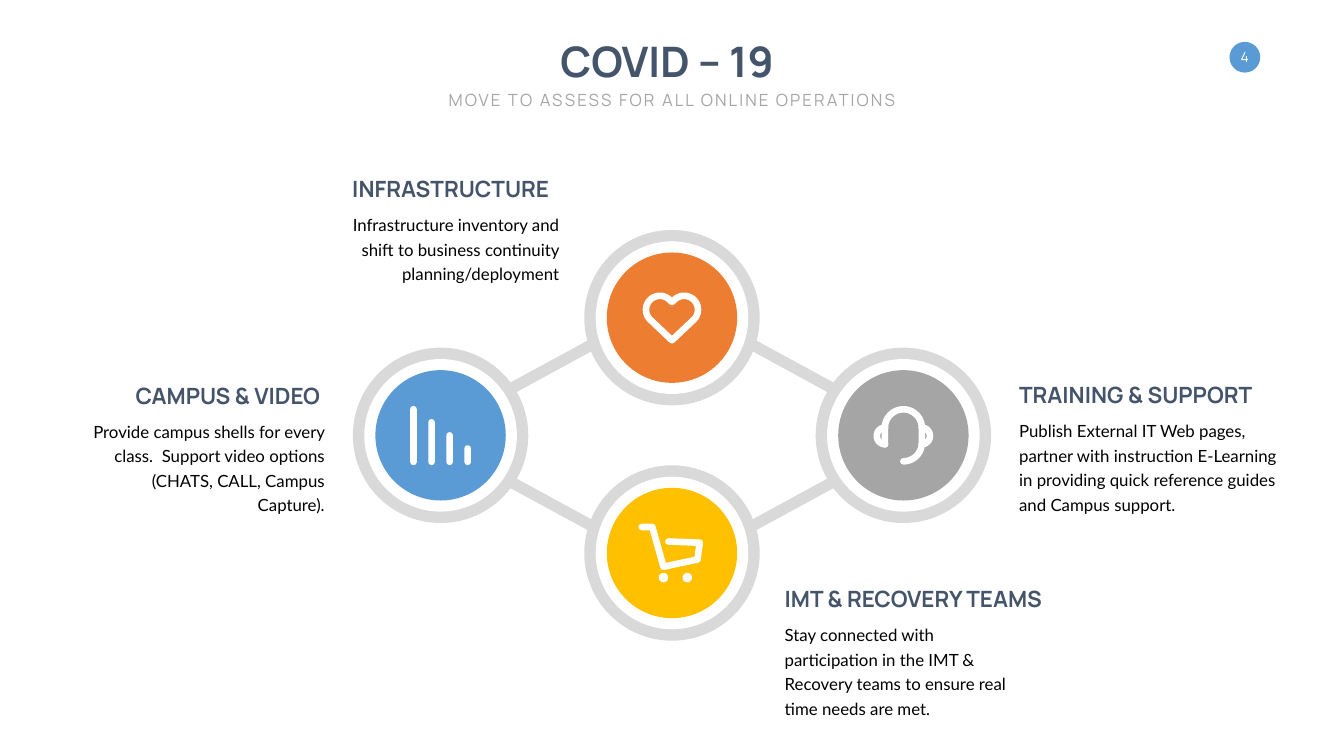
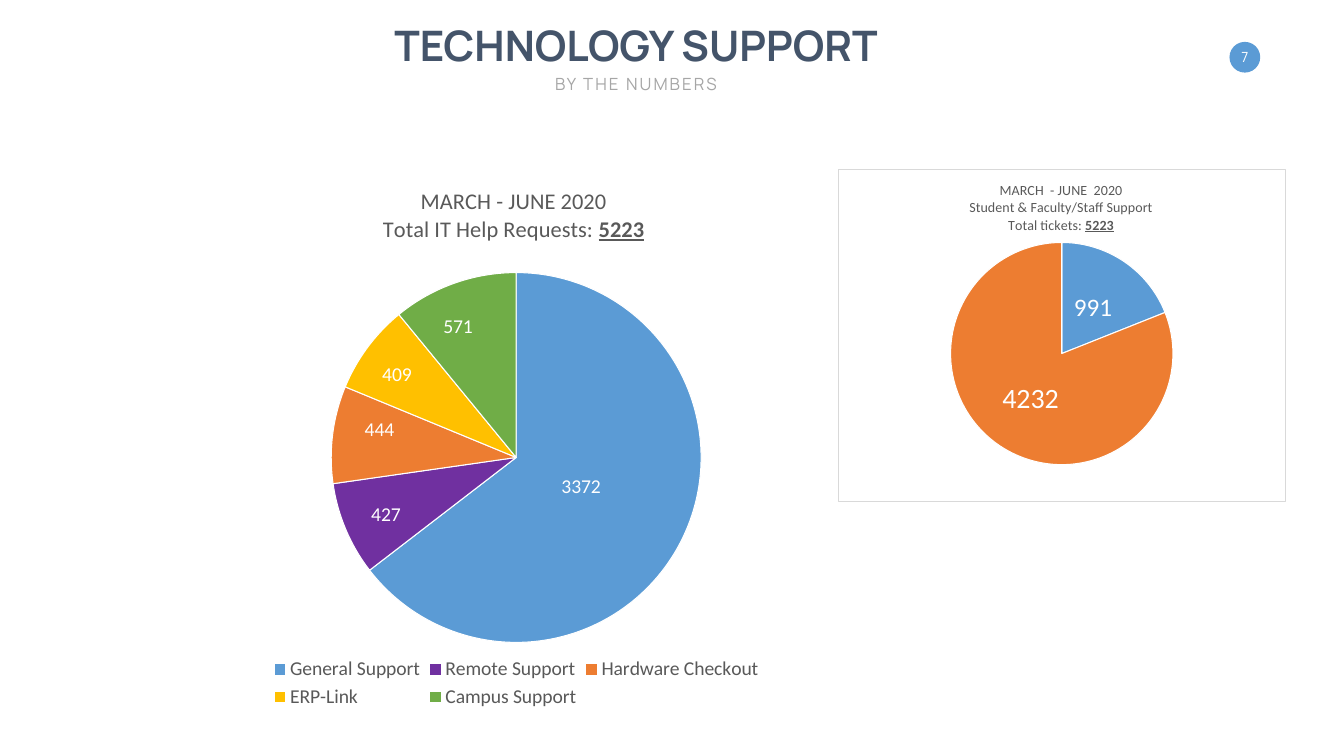
from dataclasses import dataclass
from math import cos, radians, sin

from lxml.etree import SubElement
from pptx import Presentation
from pptx.chart.data import CategoryChartData
from pptx.dml.color import RGBColor
from pptx.enum.chart import XL_CHART_TYPE as ChartType
from pptx.enum.chart import XL_LABEL_POSITION as LabelPos
from pptx.enum.chart import XL_LEGEND_POSITION as LegendPos
from pptx.enum.shapes import MSO_SHAPE as Shape
from pptx.enum.text import MSO_ANCHOR as Anchor
from pptx.enum.text import PP_ALIGN as Align
from pptx.oxml import parse_xml
from pptx.oxml.ns import nsdecls, qn
from pptx.util import Cm, Pt


@dataclass(frozen=True)
class Theme:
    white: str = "FFFFFF"
    black: str = "000000"
    navy: str = "44546A"
    silver: str = "A6A6A6"
    ring: str = "D9D9D9"
    label: str = "595959"
    blue: str = "5B9BD5"
    orange: str = "ED7D31"
    gray: str = "A5A5A5"
    gold: str = "FFC000"
    purple: str = "7030A0"
    green: str = "70AD47"
    display: str = "Manrope"
    body: str = "Lato"
    chart: str = "Calibri"
    title_size: int = 60
    heading_size: int = 32
    text_size: int = 24
    number_size: int = 20
    icon_line: float = 9.4


THEME = Theme()


def rgb(color):
    return RGBColor.from_string(color)


def arc(cx, cy, r, start, end, steps=24):
    angles = [radians(start + (end - start) * i / steps) for i in range(steps + 1)]
    return [(cx + r * cos(a), cy + r * sin(a)) for a in angles]


def set_layout(element, **values):
    old = element.find(qn("c:layout"))
    if old is not None:
        element.remove(old)
    layout = parse_xml(f"<c:layout {nsdecls('c')}><c:manualLayout/></c:layout>")
    manual = layout[0]
    if element.tag == qn("c:plotArea"):
        SubElement(manual, qn("c:layoutTarget")).set("val", "inner")
    if element.tag != qn("c:dLbl"):
        for mode in ("xMode", "yMode"):
            SubElement(manual, qn(f"c:{mode}")).set("val", "edge")
    for key, value in values.items():
        SubElement(manual, qn(f"c:{key}")).set("val", str(value))
    overlay = element.find(qn("c:overlay"))
    if overlay is not None:
        overlay.addprevious(layout)
    else:
        element.insert(1 if element.tag == qn("c:dLbl") else 0, layout)


class Deck:
    def __init__(self, theme):
        self.theme = theme
        self.prs = Presentation()
        self.prs.slide_width, self.prs.slide_height = Cm(67.72), Cm(38.1)
        self.s = None

    def slide(self, number):
        t = self.theme
        self.s = self.prs.slides.add_slide(self.prs.slide_layouts[6])
        sp = self.shape(Shape.OVAL, 61.95, 2.11, 1.55, 1.55, t.blue)
        tf = sp.text_frame
        tf.margin_left = tf.margin_right = tf.margin_top = tf.margin_bottom = 0
        tf.vertical_anchor = Anchor.MIDDLE
        tf.word_wrap = False
        tf.text = str(number)
        tf.paragraphs[0].alignment = Align.CENTER
        self.format(tf.paragraphs[0].runs[0], t.number_size, t.white, t.display)

    def format(self, r, size, color, font, bold=False):
        r.font.size, r.font.name, r.font.bold = Pt(size), font, bold
        r.font.color.rgb = rgb(color)

    def shape(self, kind, x, y, w, h, fill):
        sp = self.s.shapes.add_shape(kind, Cm(x), Cm(y), Cm(w), Cm(h))
        sp.shadow.inherit = False
        sp.fill.solid()
        sp.fill.fore_color.rgb = rgb(fill)
        sp.line.fill.background()
        return sp

    def disc(self, cx, cy, d, fill):
        return self.shape(Shape.OVAL, cx - d / 2, cy - d / 2, d, d, fill)

    def outline(self, contours, closed):
        builder = None
        for contour in contours:
            pts = [(Cm(x), Cm(y)) for x, y in contour]
            if builder is None:
                builder = self.s.shapes.build_freeform(*pts[0], scale=1.0)
            else:
                builder.move_to(*pts[0])
            builder.add_line_segments(pts[1:], close=closed)
        sp = builder.convert_to_shape()
        sp.shadow.inherit = False
        return sp

    def band(self, contours, fill):
        sp = self.outline(contours, True)
        sp.fill.solid()
        sp.fill.fore_color.rgb = rgb(fill)
        sp.line.fill.background()

    def stroke(self, cx, cy, points, closed=False):
        sp = self.outline([[(cx + x, cy + y) for x, y in points]], closed)
        sp.fill.background()
        sp.line.color.rgb = rgb(self.theme.white)
        sp.line.width = Pt(self.theme.icon_line)
        ln = sp.line._get_or_add_ln()
        ln.set("cap", "rnd")
        SubElement(ln, qn("a:round"))

    def text(self, x, y, w, h, text, size, color, font, align=Align.LEFT,
             bold=False, wrap=False, anchor=Anchor.TOP):
        sp = self.s.shapes.add_textbox(Cm(x), Cm(y), Cm(w), Cm(h))
        tf = sp.text_frame
        tf.word_wrap, tf.vertical_anchor = wrap, anchor
        tf.text = text
        p = tf.paragraphs[0]
        p.alignment = align
        self.format(p.runs[0], size, color, font, bold)
        return tf

    def header(self, center, top, title, subtitle, title_w, subtitle_w, shift=0):
        t = self.theme
        self.text(center - title_w / 2 + shift, top, title_w, 2.82, title,
                  t.title_size, t.navy, t.display, Align.CENTER, bold=True)
        tf = self.text(center - subtitle_w / 2, top + 2.7, subtitle_w, 1.27, subtitle,
                       t.text_size, t.silver, t.display, Align.CENTER)
        tf.paragraphs[0].runs[0].font._element.set("spc", "300")

    def block(self, edge, top, heading, body, heading_w, body_w, body_h,
              align=Align.LEFT, inset=0.25):
        t = self.theme
        back = 1 if align == Align.RIGHT else 0
        tf = self.text(edge - back * heading_w, top, heading_w, 1.63, heading,
                       t.heading_size, t.navy, t.display, align, bold=True,
                       anchor=Anchor.BOTTOM)
        tf.margin_right = Cm(inset)
        tf = self.text(edge - back * body_w, top + 1.8, body_w, body_h, body,
                       t.text_size, t.black, t.body, align, wrap=True)
        tf.paragraphs[0].line_spacing = Pt(35)

    def node(self, cx, cy, color):
        for d, fill in ((8.84, self.theme.ring), (7.69, self.theme.white), (6.57, color)):
            self.disc(cx, cy, d, fill)

    def bars_icon(self, cx, cy):
        for i in range(4):
            top = -1.48 + 0.66 * i
            sp = self.shape(Shape.ROUNDED_RECTANGLE, cx - 1.53 + 0.91 * i, cy + top,
                            0.33, 1.5 - top, self.theme.white)
            sp.adjustments[0] = 0.5

    def heart_icon(self, cx, cy):
        right = arc(0.61, -0.4, 0.7, 45, -135)
        left = [(-x, y) for x, y in reversed(right)]
        self.stroke(cx, cy, [(0, 1.14), *right, (0, -0.79), *left], closed=True)

    def headset_icon(self, cx, cy):
        self.stroke(cx, cy, [(-0.93, 0.46), *arc(0, -0.38, 0.93, 180, 360),
                             *arc(0, 0.38, 0.93, 0, 90)])
        self.stroke(cx, cy, arc(-0.92, 0.03, 0.42, 90, 270))
        self.stroke(cx, cy, arc(0.92, 0.03, 0.42, -90, 90))

    def cart_icon(self, cx, cy):
        self.stroke(cx, cy, [(-1.52, -1.31), (-0.99, -1.31), (-0.43, 0.69),
                             (1.28, 0.33), (1.4, -0.52), (-0.18, -0.58)])
        for x in (-0.43, 0.77):
            self.disc(cx + x, cy + 1.24, 0.48, self.theme.white)

    def pie(self, x, y, w, h, title, total, title_size, slices, plot, title_at):
        t = self.theme
        data = CategoryChartData()
        data.categories = [name for name, *_ in slices]
        data.add_series("", [value for _, value, *_ in slices])
        chart = self.s.shapes.add_chart(ChartType.PIE, Cm(x), Cm(y), Cm(w), Cm(h), data).chart
        chart.font.size, chart.font.name = Pt(10), t.chart
        chart.has_legend = False
        chart.plots[0].vary_by_categories = True

        tf = chart.chart_title.text_frame
        tf.text = "\n".join(title)
        r = tf.paragraphs[-1].add_run()
        r.text = total
        for p in tf.paragraphs:
            for run in p.runs:
                self.format(run, title_size, t.label, t.chart)
        r.font.bold = r.font.underline = True
        set_layout(chart.chart_title._element, x=title_at[0], y=title_at[1])
        set_layout(chart._chartSpace.chart.plotArea,
                   **dict(zip(("x", "y", "w", "h"), plot)))

        for i, (_, _, color, size, *offset) in enumerate(slices):
            point = chart.plots[0].series[0].points[i]
            point.format.fill.solid()
            point.format.fill.fore_color.rgb = rgb(color)
            point.format.line.color.rgb = rgb(t.white)
            point.format.line.width = Pt(1.5)
            label = point.data_label
            label.position = LabelPos.CENTER
            label.font.size, label.font.name = Pt(size), t.chart
            label.font.color.rgb = rgb(t.white)
            if offset:
                set_layout(label._get_or_add_dLbl(), x=offset[0], y=offset[1])
        return chart

    def legend(self, chart, size, x, y, w, h):
        chart.has_legend = True
        legend = chart.legend
        legend.position, legend.include_in_layout = LegendPos.BOTTOM, False
        legend.font.size, legend.font.name = Pt(size), self.theme.chart
        legend.font.color.rgb = rgb(self.theme.label)
        set_layout(legend._element, x=x, y=y, w=w, h=h)

    def frame(self, chart):
        t = self.theme
        chart._chartSpace.chart.addnext(parse_xml(
            f'<c:spPr {nsdecls("c", "a")}>'
            f'<a:solidFill><a:srgbClr val="{t.white}"/></a:solidFill>'
            f'<a:ln w="9525"><a:solidFill><a:srgbClr val="{t.ring}"/></a:solidFill></a:ln>'
            '</c:spPr>'))


def operations_slide(deck):
    t = deck.theme
    cx, cy, dx, dy = 33.86, 21.94, 11.66, 5.93
    deck.slide(4)
    deck.header(cx, 1.68, "COVID – 19", "MOVE TO ASSESS FOR ALL ONLINE OPERATIONS",
                12.45, 23.42, shift=-0.25)

    def diamond(w, h):
        return [(cx, cy + h), (cx + w, cy), (cx, cy - h), (cx - w, cy)]

    deck.band([diamond(13.03, 7.09), diamond(11.82, 6.45)[::-1]], t.ring)
    for x, y, color, icon in (
        (cx - dx, cy, t.blue, deck.bars_icon),
        (cx, cy + dy, t.gold, deck.cart_icon),
        (cx, cy - dy, t.orange, deck.heart_icon),
        (cx + dx, cy, t.gray, deck.headset_icon),
    ):
        deck.node(x, y, color)
        icon(x, y)

    deck.block(16.61, 19.1, "CAMPUS & VIDEO",
               "Provide campus shells for every class.  Support video options "
               "(CHATS, CALL, Campus Capture).",
               10.49, 12.4, 3.99, Align.RIGHT, 0.48)
    deck.block(51.1, 19.07, "TRAINING & SUPPORT",
               "Publish External IT Web pages, partner with instruction E-Learning in "
               "providing quick reference guides and Campus support.",
               13.11, 13.69, 5.23)
    deck.block(39.29, 29.36, "IMT & RECOVERY TEAMS",
               "Stay connected with participation in the IMT & Recovery teams to ensure "
               "real time needs are met.",
               14.4, 12.4, 3.99)
    deck.block(28.42, 8.68, "INFRASTRUCTURE",
               "Infrastructure inventory and shift to business continuity planning/deployment",
               10.97, 12.4, 3.99, Align.RIGHT, 0.74)


def support_slide(deck):
    t = deck.theme
    deck.slide(7)
    requests = deck.pie(
        3.38, 8.53, 45.26, 27.41,
        ["MARCH - JUNE 2020", "Total IT Help Requests: "], "5223", 32,
        [("General Support", 3372, t.blue, 28, -0.02, -0.02),
         ("Remote Support", 427, t.purple, 28, -0.05, 0.04),
         ("Hardware Checkout", 444, t.orange, 28, -0.05, -0.03),
         ("ERP-Link", 409, t.gold, 28, -0.05, -0.05),
         ("Campus Support", 571, t.green, 28, -0.03, -0.08)],
        (0.29, 0.19, 0.42, 0.68), (0.35, 0.03))
    deck.legend(requests, 28, 0.22, 0.89, 0.56, 0.11)
    tickets = deck.pie(
        42.21, 8.53, 22.58, 16.74,
        ["MARCH  - JUNE  2020", "Student & Faculty/Staff Support", "Total tickets: "],
        "5223", 20,
        [("", 991, t.blue, 36), ("", 4232, t.orange, 40)],
        (0.25, 0.22, 0.5, 0.67), (0.29, 0.03))
    deck.frame(tickets)
    deck.header(32.05, 0.87, "TECHNOLOGY SUPPORT", "BY THE NUMBERS", 24.94, 8.81)


def main():
    deck = Deck(THEME)
    operations_slide(deck)
    support_slide(deck)
    deck.prs.save("out.pptx")


if __name__ == "__main__":
    main()
